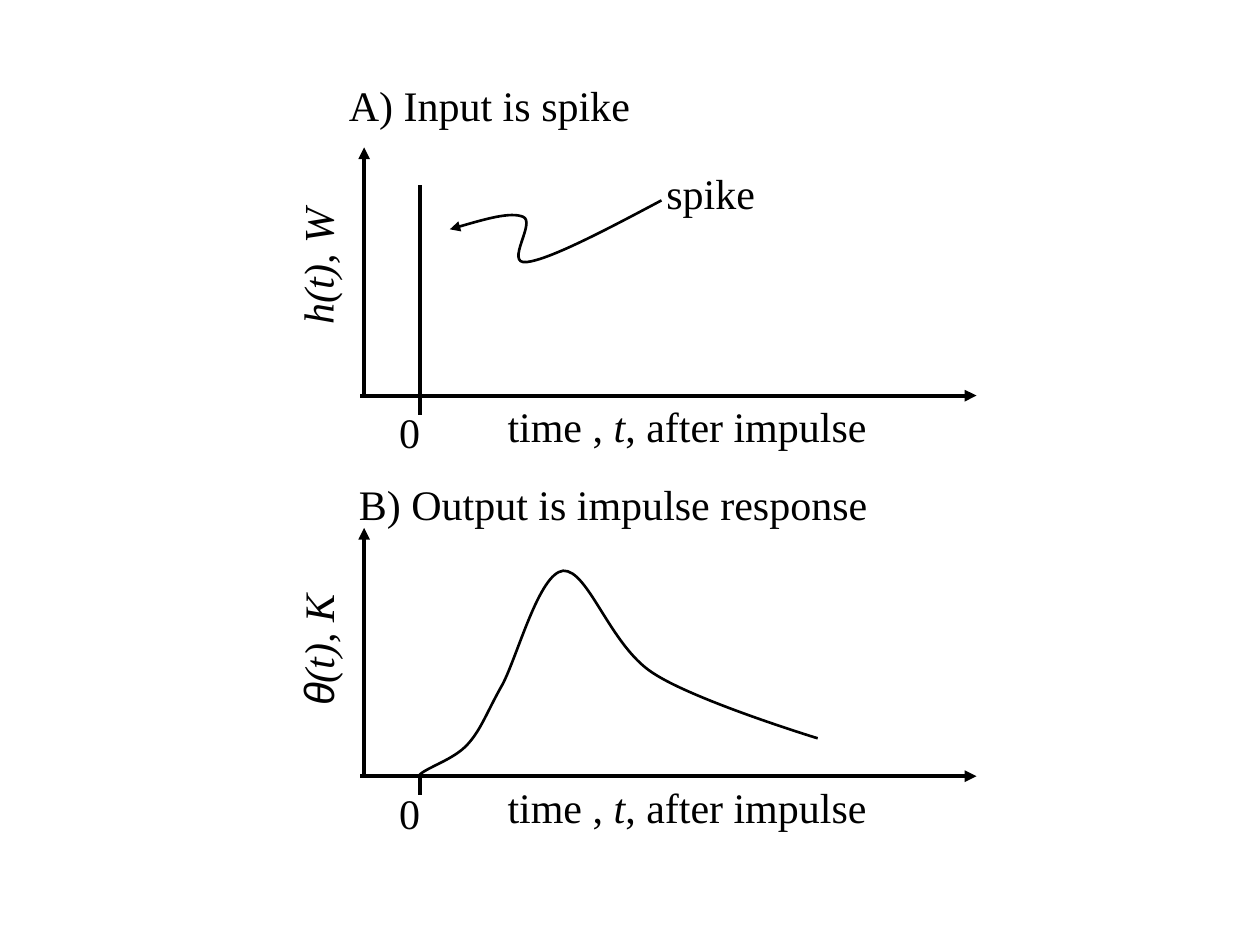
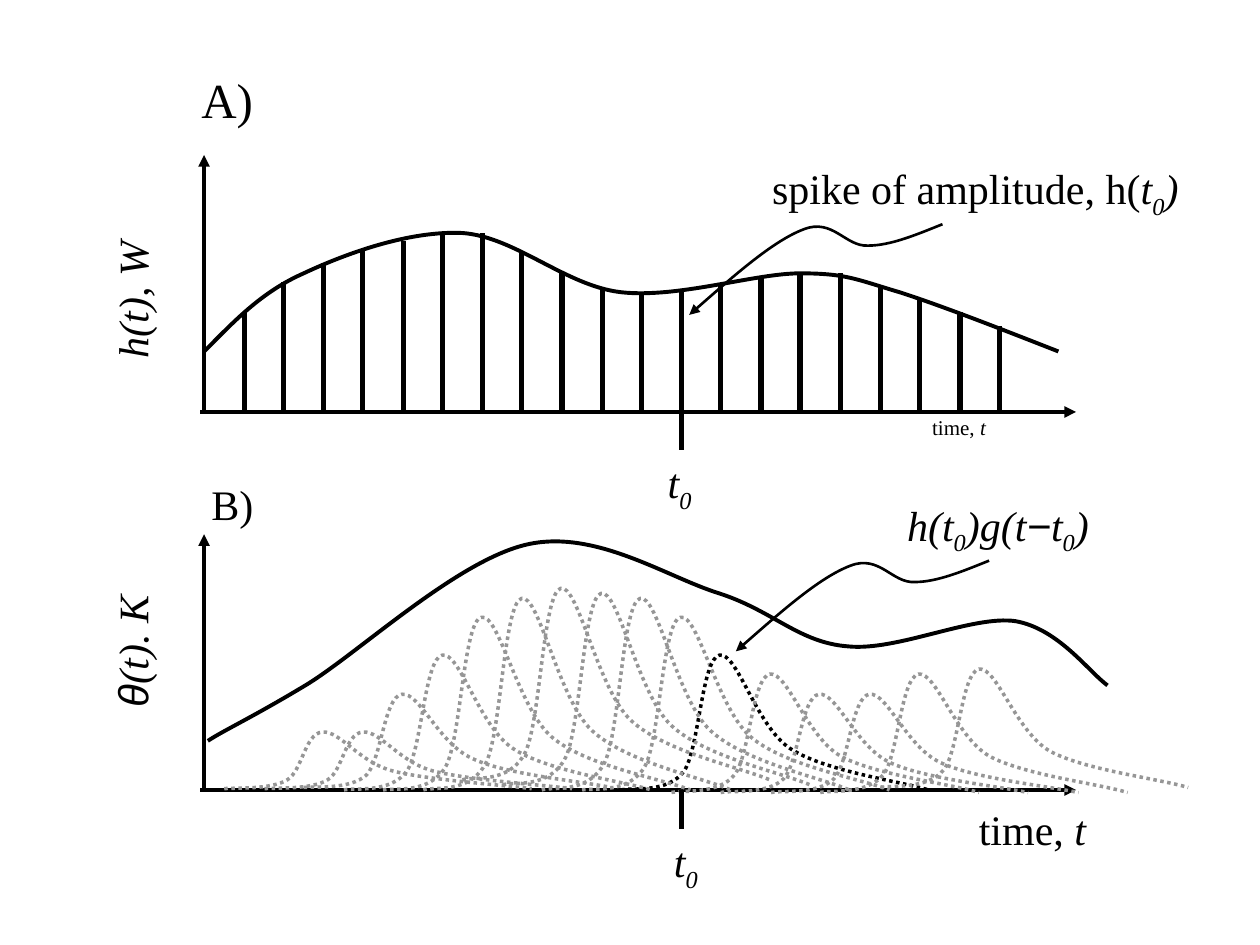
from lxml import etree
from pptx import Presentation
from pptx import util as u
from pptx.dml.color import RGBColor
from pptx.enum import dml, shapes, text
from pptx.oxml.ns import qn

PX = 9144  # 100 px to the inch
COLORS = {"ink": "000000", "response": "969696"}
SERIF, SANS = "Times New Roman", "Arial"

TIME_AFTER = [("time , ", ""), ("t", "i"), (", after impulse", "")]
TIME = [("time, ", ""), ("t", "i")]
T_ZERO = [("t", "i"), ("0", "is")]
HEAT = [("h(t), W", "i")]

SPIKE_TOPS = [248, 224, 209, 198, 191, 185, 185, 201, 217, 228,
              232, 229, 225, 219, 217, 217, 227, 237, 248, 259]
SPIKE_STEP = 31.56
T_ZERO_SPIKE = 12

# Bell outline: x in px from its left, y as a share of its height
BELL = [(0, .975), (8, .956), (37, 1), (50, .84), (62, .68), (64, .05), (78, .025),
        (92, 0), (107, .525), (134, .68), (161, .84), (221, .91), (244, .975)]
# left, top, height
BELLS = [(462, 486, 145), (493, 517, 113), (533, 533, 98), (572, 549, 82),
         (612, 549, 82), (651, 533, 98), (699, 529, 98), (430, 471, 160),
         (399, 467, 160), (367, 463, 160), (336, 471, 160), (304, 486, 145),
         (273, 517, 113), (241, 549, 78), (210, 580, 47), (178, 580, 47)]
T_ZERO_BELL = (493, 517, 113)

SQUIGGLE = [(0, 0), (33, -29), (67, -59), (91, -68), (114, -77), (124, -54),
            (142, -55), (160, -55), (181, -64), (201, -72)]


class Sketch:
    """Draws on the current slide in one style."""

    def __init__(self, presentation):
        self.presentation = presentation
        self.slide = None

    def new_slide(self):
        self.slide = self.presentation.slides.add_slide(self.presentation.slide_layouts[6])

    def stroke(self, shape, width, color="ink", arrow=False, dotted=False):
        shape.line.color.rgb = RGBColor.from_string(COLORS[color])
        shape.line.width = u.Pt(width)
        if dotted:
            shape.line.dash_style = dml.MSO_LINE.ROUND_DOT
        if arrow:
            outline = shape.line._get_or_add_ln()
            etree.SubElement(outline, qn("a:headEnd"), type="triangle")

    def line(self, start, end, width=2.25, arrow=False):
        connector = self.slide.shapes.add_connector(
            shapes.MSO_CONNECTOR.STRAIGHT, *[round(value) * PX for value in (*start, *end)])
        self.stroke(connector, width, arrow=arrow)
        etree.SubElement(connector._element.spPr, qn("a:effectLst"))

    def axes(self, left, top, right, base):
        self.line((left, top), (left, base), arrow=True)
        self.line((right, base), (left - 3, base), arrow=True)

    def curve(self, points, width, **style):
        """Bezier curve: a start, then two controls and an end for each piece."""
        builder = self.slide.shapes.build_freeform(*points[0], scale=PX)
        builder.add_line_segments(points[1:], close=False)
        shape = builder.convert_to_shape()
        outline = shape._element.find(".//" + qn("a:path"))
        segments = outline.findall(qn("a:lnTo"))
        for first, second, third in zip(segments[::3], segments[1::3], segments[2::3]):
            first.tag = qn("a:cubicBezTo")
            first.extend([second[0], third[0]])
            outline.remove(second)
            outline.remove(third)
        shape.fill.background()
        shape.shadow.inherit = False
        self.stroke(shape, width, **style)

    def bell(self, left, top, height, color):
        points = [(left + x, round(top + share * height)) for x, share in BELL]
        self.curve(points, 2, color=color, dotted=True)

    def callout(self, x, y):
        self.curve([(x + dx, y + dy) for dx, dy in SQUIGGLE], 1.5, arrow=True)

    def label(self, runs, left, top, width, height=50, size=24, rotation=0, spacing=None):
        """Runs are (wording, marks); marks: i italic, s subscript, a sans."""
        box = self.slide.shapes.add_textbox(*[value * PX for value in (left, top, width, height)])
        box.rotation = rotation
        frame = box.text_frame
        frame.word_wrap = True
        if spacing is None:
            frame.auto_size = text.MSO_AUTO_SIZE.SHAPE_TO_FIT_TEXT
        paragraph = frame.paragraphs[0]
        paragraph.line_spacing = spacing
        paragraph.font.size = u.Pt(size)
        paragraph.font.name = SERIF
        paragraph.font.color.rgb = RGBColor.from_string(COLORS["ink"])
        all_italic = all("i" in marks for _, marks in runs)
        paragraph.font.italic = all_italic
        for wording, marks in runs:
            run = paragraph.add_run()
            run.text = wording
            if "i" in marks and not all_italic:
                run.font.italic = True
            if "a" in marks:
                run.font.name = SANS
            if "s" in marks:
                run._r.get_or_add_rPr().set("baseline", "-25000")


def impulse_slide(sketch):
    sketch.new_slide()
    for shift, tick_top in ((0, 147), (302, 615)):
        base = 314 + shift
        sketch.axes(289, 117 + shift, 775, base)
        sketch.line((333, tick_top), (333, base + 15))
        sketch.label(TIME_AFTER, 393, base - 1, 424)
        sketch.label([("0", "")], 307, base + 4, 59)

    sketch.label([("A) Input is spike", "")], 267, 58, 383)
    sketch.label(HEAT, 176, 167, 151, rotation=270)
    sketch.curve([(357, 182), (381, 175), (405, 168), (415, 172), (426, 176),
                  (400, 210), (418, 208), (436, 206), (480, 183), (525, 159)],
                 1.5, arrow=True)
    sketch.label([("spike", "")], 519, 128, 104)

    sketch.label([("B) Output is impulse response", "")], 275, 375, 517)
    sketch.label([("θ", "ia"), ("(t), K", "i")], 169, 462, 166, rotation=270)
    sketch.curve([(333, 615), (339, 609), (360, 603), (371, 591), (382, 579),
                  (386, 566), (399, 543), (411, 520), (428, 455), (447, 453),
                  (467, 452), (484, 512), (518, 534), (551, 556), (649, 586), (649, 586)], 1.5)


def superposition_slide(sketch):
    sketch.new_slide()
    tight = {"height": 62, "spacing": 0.9}

    sketch.label([("A)", "")], 150, 50, 95, 57, size=28)
    sketch.label(HEAT, 37, 185, 156, rotation=270, **tight)
    sketch.axes(162, 123, 854, 327)
    sketch.curve([(162, 279), (185, 256), (207, 232), (241, 217), (275, 201),
                  (325, 183), (367, 185), (409, 188), (449, 227), (493, 232),
                  (538, 237), (599, 217), (635, 217), (672, 217), (680, 222),
                  (714, 232), (748, 243), (794, 261), (840, 279)], 2.25)
    for number, top in enumerate(SPIKE_TOPS, 1):
        x = 162 + number * SPIKE_STEP
        sketch.line((x, top), (x, 357 if number == T_ZERO_SPIKE else 326), 3)
    sketch.label(TIME, 730, 326, 158, size=12, **tight)
    sketch.label(T_ZERO, 520, 358, 158, **tight)
    sketch.callout(547, 250)
    sketch.label([("spike of amplitude, h(", ""), ("t", "i"), ("0", "is"), (")", "i")],
                 603, 125, 363, 78, spacing=0.9)

    sketch.label([("B)", "")], 158, 375, 95)
    sketch.label([("θ", "ia"), ("(t). K", "i")], 29, 454, 172, rotation=270, **tight)
    sketch.axes(162, 424, 854, 627)
    sketch.curve([(165, 588), (177, 580), (201, 569), (244, 543), (286, 517),
                  (364, 444), (419, 432), (473, 420), (529, 458), (571, 471),
                  (614, 485), (634, 510), (673, 513), (712, 517), (772, 488),
                  (806, 493), (840, 499), (864, 533), (879, 544)], 2.25)
    for bell in BELLS:
        sketch.bell(*bell, "ink" if bell == T_ZERO_BELL else "response")
    sketch.line((541, 627), (541, 658), 3)
    sketch.label(TIME, 767, 637, 158, **tight)
    sketch.label(T_ZERO, 525, 659, 158, **tight)
    sketch.callout(584, 517)
    sketch.label([("h(t", "i"), ("0", "is"), (")g(t", "i"), ("−", "ia"), ("t", "i"),
                  ("0", "is"), (")", "i")], 710, 392, 221, **tight)


def main():
    presentation = Presentation()
    presentation.slide_width = 1000 * PX
    presentation.slide_height = 750 * PX
    sketch = Sketch(presentation)
    impulse_slide(sketch)
    superposition_slide(sketch)
    presentation.save("out.pptx")


if __name__ == "__main__":
    main()
